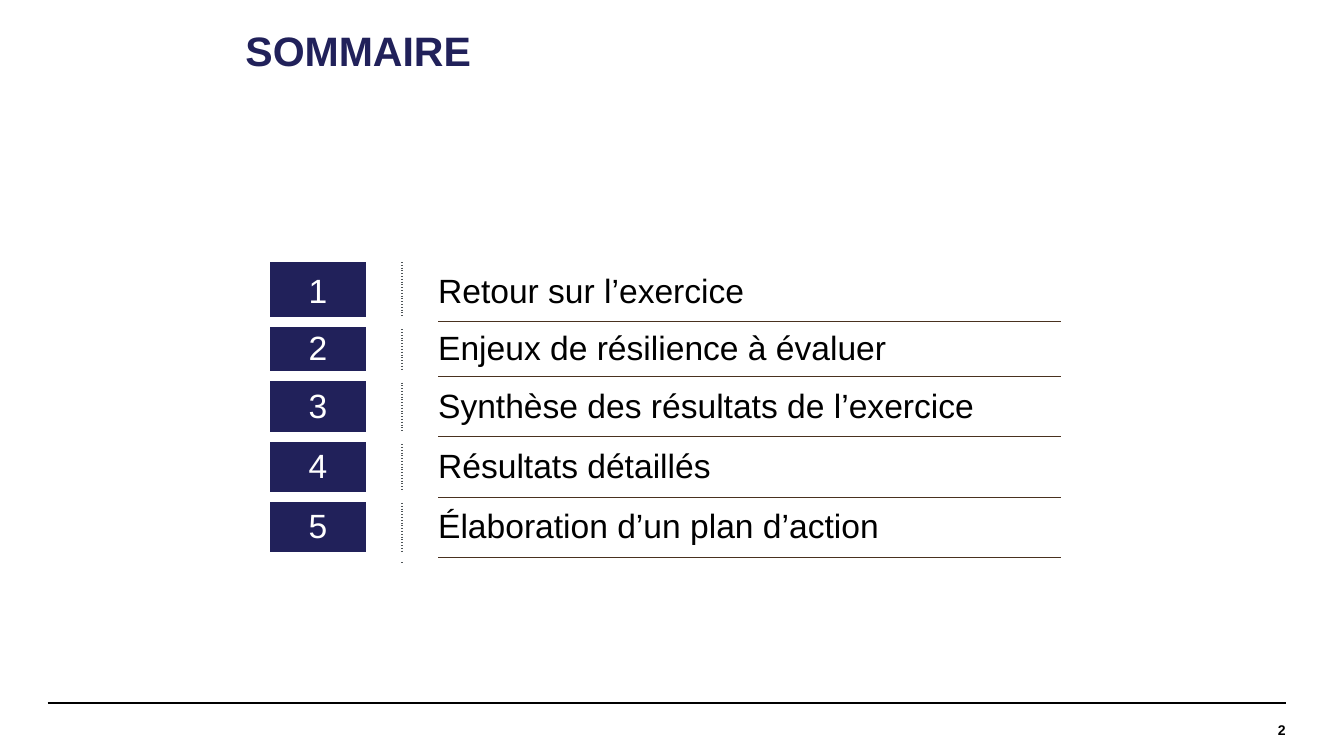
from lxml import etree
from pptx import Presentation
from pptx import util as u
from pptx.dml.color import RGBColor
from pptx.enum import shapes, text
from pptx.oxml import ns

COLORS = {"navy": "21215A", "white": "FFFFFF", "black": "000000",
          "grey": "505659", "brown": "49311F"}
TOPICS = ["Retour sur l’exercice", "Enjeux de résilience à évaluer",
          "Synthèse des résultats de l’exercice", "Résultats détaillés",
          "Élaboration d’un plan d’action"]
COL_WIDTHS = [1.82, 0.68, 0.68, 11.78]
ROW_HEIGHTS = [1.13, 1.03, 1.14, 1.14, 1.14]
GAP = ("white", 6, "solid")
RULE = ("brown", 0.5, "solid")
DOTS = ("grey", 1.5, "sysDot")


def write(tf, content, size, color, bold=False, align=text.PP_ALIGN.LEFT):
    tf.text = content
    p = tf.paragraphs[0]
    p.alignment = align
    f = p.runs[0].font
    f.name, f.size, f.bold = "Arial", u.Pt(size), bold
    f.color.rgb = RGBColor.from_string(COLORS[color])
    return p


def set_borders(cell, **sides):
    """Draw the given sides (L, R, T, B) and hide the others."""
    tcPr = cell._tc.get_or_add_tcPr()
    for side in "LRTB":
        ln = etree.SubElement(tcPr, ns.qn(f"a:ln{side}"))
        if side not in sides:
            etree.SubElement(ln, ns.qn("a:noFill"))
            continue
        color, width, dash = sides[side]
        ln.set("w", str(u.Pt(width)))
        fill = etree.SubElement(ln, ns.qn("a:solidFill"))
        etree.SubElement(fill, ns.qn("a:srgbClr"), val=COLORS[color])
        etree.SubElement(ln, ns.qn("a:prstDash"), val=dash)


prs = Presentation()
prs.slide_width, prs.slide_height = u.Cm(25.4), u.Cm(14.28)
s = prs.slides.add_slide(prs.slide_layouts[6])

# Footer rule
line = s.shapes.add_connector(shapes.MSO_CONNECTOR.STRAIGHT,
                              u.Cm(0.9), u.Cm(13.28), u.Cm(24.3), u.Cm(13.28))
line.line.color.rgb = RGBColor.from_string(COLORS["black"])
line.line.width = u.Pt(0.8)
etree.SubElement(line._element.spPr, ns.qn("a:effectLst"))

# Title
title = s.shapes.add_textbox(u.Cm(4.34), u.Cm(0.15), u.Cm(15.88), u.Cm(1.7))
tf = title.text_frame
tf.word_wrap = True
tf.vertical_anchor = text.MSO_ANCHOR.MIDDLE
p = write(tf, "SOMMAIRE", 22, "navy", bold=True)
p.line_spacing = 0.9
p._p.get_or_add_pPr().set("marL", str(u.Cm(0.05)))

# Agenda: number, dotted divider between two narrow columns, topic
frame = s.shapes.add_table(len(TOPICS), len(COL_WIDTHS), u.Cm(5.1), u.Cm(4.95),
                           u.Cm(sum(COL_WIDTHS)), u.Cm(sum(ROW_HEIGHTS)))
table = frame.table
table.first_row = table.horz_banding = False
for col, width in zip(table.columns, COL_WIDTHS):
    col.width = u.Cm(width)
for i, (topic, height) in enumerate(zip(TOPICS, ROW_HEIGHTS)):
    table.rows[i].height = u.Cm(height)
    number, left, right, label = (table.cell(i, j) for j in range(4))
    above = {"T": GAP} if i else {}
    set_borders(number, B=GAP, **above)
    set_borders(left, R=DOTS, B=GAP, **above)
    set_borders(right, L=DOTS, B=GAP, **above)
    set_borders(label, B=RULE, **({"T": RULE} if i else {}))
    for cell in (left, right, label):
        cell.fill.background()
    number.fill.solid()
    number.fill.fore_color.rgb = RGBColor.from_string(COLORS["navy"])
    number.vertical_anchor = label.vertical_anchor = text.MSO_ANCHOR.MIDDLE
    label.margin_left = 0
    write(number.text_frame, str(i + 1), 18, "white", align=text.PP_ALIGN.CENTER)
    write(label.text_frame, topic, 18, "black")

# Page number
page = s.shapes.add_textbox(u.Cm(20.54), u.Cm(13.28), u.Cm(3.76), u.Cm(1))
tf = page.text_frame
tf.word_wrap = True
tf.vertical_anchor = text.MSO_ANCHOR.MIDDLE
tf.margin_left = tf.margin_right = tf.margin_top = tf.margin_bottom = 0
write(tf, "2", 7.5, "black", bold=True, align=text.PP_ALIGN.RIGHT)

prs.save("out.pptx")
